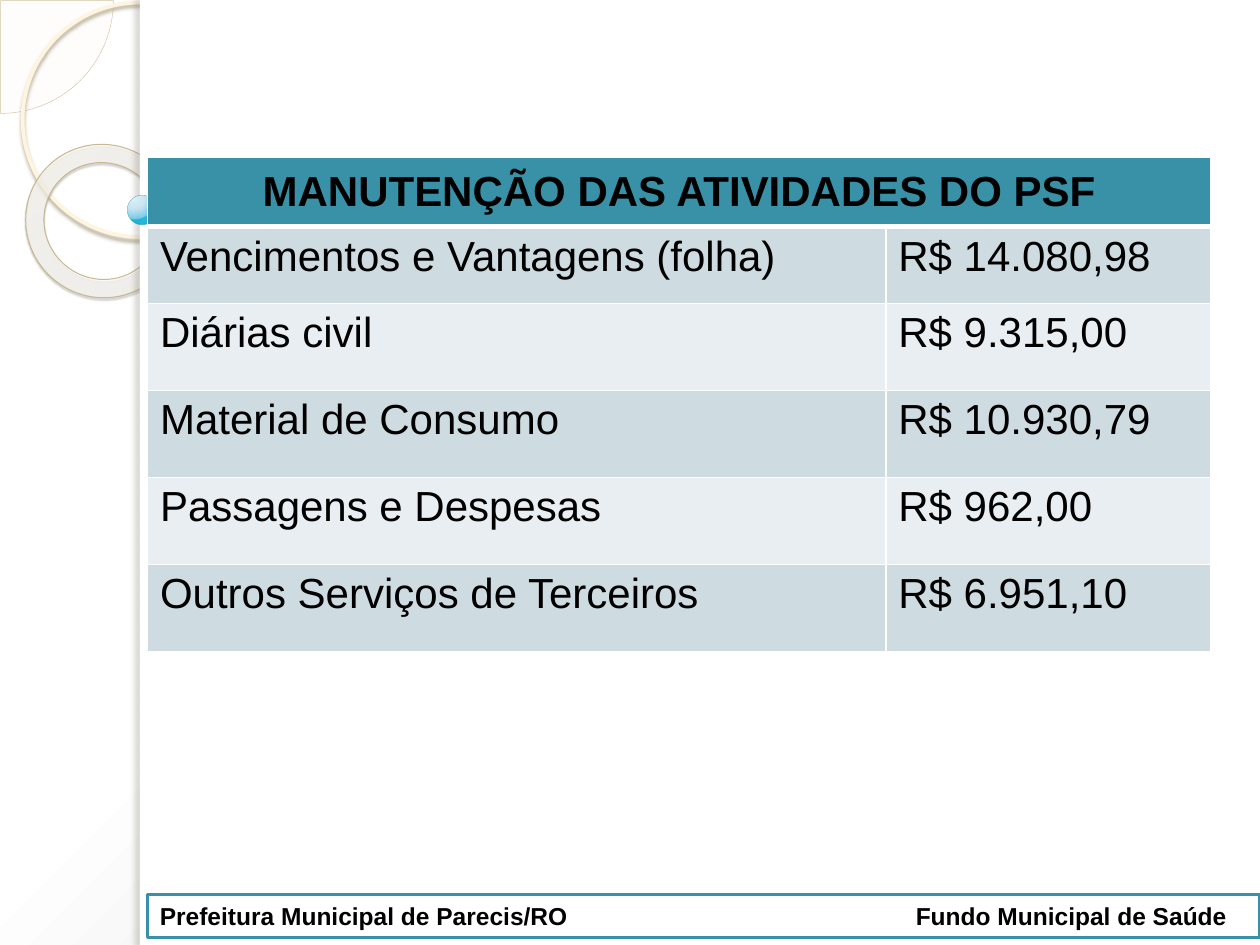
import dataclasses

import pptx
import pptx.dml.color
import pptx.enum.shapes
import pptx.enum.text
import pptx.oxml.ns
import pptx.util
from lxml import etree

Inches = pptx.util.Inches
Pt = pptx.util.Pt
SHAPE = pptx.enum.shapes.MSO_SHAPE
ALIGN = pptx.enum.text.PP_ALIGN
ANCHOR = pptx.enum.text.MSO_ANCHOR
qn = pptx.oxml.ns.qn


@dataclasses.dataclass(frozen=True)
class Theme:
    font: str = "Arial"
    table_size: int = 24
    footer_size: int = 14
    text: str = "000000"
    white: str = "FFFFFF"
    accent: str = "3891A7"
    bands: tuple = ("CEDCE1", "E8EEF1")
    background: tuple = (("FFFFFF", 0, 100), ("FFFFFF", 40, 100), ("C5C5C5", 100, 100))
    donut: tuple = (("FFFCF6", 0, 70), ("FFFEFB", 70, 55), ("F0D28E", 100, 60))
    ball: tuple = (("DAF4FF", 0, 95), ("C3E3F0", 50, 90), ("6BC7E8", 95, 88), ("00ABD5", 100, 85))
    pie: str = "FEFAF4"
    pie_line: str = "D3C39F"
    ring_line: str = "FFF5DE"
    ring_shadow: str = "B0A68F"
    donut_line: str = "C7B893"
    donut_shadow: str = "5A5444"
    ball_line: str = "308EA5"
    dot_line: str = "318093"
    edge_shadow: str = "736F63"


def rgb(color):
    return pptx.dml.color.RGBColor.from_string(color)


def add(parent, tag, **attributes):
    return etree.SubElement(parent, qn(tag), {k: str(v) for k, v in attributes.items()})


def add_color(parent, color, opacity=100):
    node = add(parent, "a:srgbClr", val=color)
    if opacity < 100:
        add(node, "a:alpha", val=opacity * 1000)


def fade(parent, opacity):
    if opacity < 100:
        color = parent.find(qn("a:solidFill") + "/" + qn("a:srgbClr"))
        add(color, "a:alpha", val=opacity * 1000)


def assign(target, values):
    for name, value in values.items():
        setattr(target, name, value)


class SlideBuilder:
    def __init__(self, slide, theme):
        self.slide = slide
        self.theme = theme

    def gradient(self, fill, owner, stops, focus):
        fill.gradient()
        node = owner.find(".//" + qn("a:gradFill"))
        node.clear()
        node.set("rotWithShape", "1")
        stop_list = add(node, "a:gsLst")
        for color, position, opacity in stops:
            add_color(add(stop_list, "a:gs", pos=position * 1000), color, opacity)
        circle = add(node, "a:path", path="circle")
        add(circle, "a:fillToRect", **{s: v * 1000 for s, v in zip("ltrb", focus)})

    def background(self, stops, focus):
        self.gradient(self.slide.background.fill, self.slide.element, stops, focus)

    def shape(self, kind, box, fill=None, opacity=100, focus=None, line=None,
              line_opacity=100, shadow=None, adjust=(), rotation=0):
        shape = self.slide.shapes.add_shape(kind, *map(Inches, box))
        shape.rotation = rotation
        for index, value in enumerate(adjust):
            shape.adjustments[index] = value
        properties = shape.element.spPr
        if focus:
            self.gradient(shape.fill, properties, fill, focus)
        elif fill:
            shape.fill.solid()
            shape.fill.fore_color.rgb = rgb(fill)
            fade(properties, opacity)
        else:
            shape.fill.background()
        if line:
            shape.line.color.rgb = rgb(line[0])
            shape.line.width = Pt(line[1])
            fade(properties.find(qn("a:ln")), line_opacity)
        else:
            shape.line.fill.background()
        shape.shadow.inherit = False
        if shadow:
            color, strength, blur, distance, angle = shadow
            outer = add(properties.find(qn("a:effectLst")), "a:outerShdw",
                        blurRad=Pt(blur), dist=Pt(distance), dir=angle * 60000,
                        algn="ctr", rotWithShape=0)
            add_color(outer, color, strength)
        return shape

    def text(self, frame, words, size, bold=False, align=ALIGN.LEFT):
        paragraph = frame.paragraphs[0]
        paragraph.alignment = align
        run = paragraph.add_run()
        run.text = words
        assign(run.font, {"name": self.theme.font, "size": Pt(size), "bold": bold})
        run.font.color.rgb = rgb(self.theme.text)

    def footer(self, box, left, right, tab):
        theme = self.theme
        bar = self.shape(SHAPE.RECTANGLE, box, theme.white, line=(theme.accent, 2))
        frame = bar.text_frame
        assign(frame, {"word_wrap": True, "vertical_anchor": ANCHOR.MIDDLE,
                       "auto_size": pptx.enum.text.MSO_AUTO_SIZE.SHAPE_TO_FIT_TEXT})
        self.text(frame, f"{left}\t{right}", theme.footer_size, bold=True)
        tabs = add(bar.element.find(".//" + qn("a:pPr")), "a:tabLst")
        add(tabs, "a:tab", pos=Inches(tab), algn="l")

    def cell(self, cell, fill, borders):
        cell.fill.solid()
        cell.fill.fore_color.rgb = rgb(fill)
        properties = cell._tc.get_or_add_tcPr()
        for index, (side, width) in enumerate(zip("LRTB", borders)):
            line = add(properties, f"a:ln{side}", w=Pt(width))
            add_color(add(line, "a:solidFill"), self.theme.white)
            properties.insert(index, line)

    def table(self, box, widths, heights, heading, items):
        theme = self.theme
        table = self.slide.shapes.add_table(
            len(heights), len(widths), *map(Inches, box)).table
        assign(table, {"first_row": False, "horz_banding": False})
        for column, width in zip(table.columns, widths):
            column.width = Inches(width)
        for row, height in zip(table.rows, heights):
            row.height = Inches(height)
        title = table.cell(0, 0)
        title.merge(table.cell(0, len(widths) - 1))
        for cell in table.rows[0].cells:
            self.cell(cell, theme.accent, (1, 1, 1, 3))
        title.vertical_anchor = ANCHOR.MIDDLE
        self.text(title.text_frame, heading, theme.table_size, True, ALIGN.CENTER)
        for number, item in enumerate(items):
            for column, words in enumerate(item):
                cell = table.cell(number + 1, column)
                self.cell(cell, theme.bands[number % 2], (1, 1, 1 if number else 3, 1))
                self.text(cell.text_frame, words, theme.table_size)


def main():
    deck = pptx.Presentation()
    assign(deck, {"slide_width": Inches(10), "slide_height": Inches(7.5)})
    theme = Theme()
    page = SlideBuilder(deck.slides.add_slide(deck.slide_layouts[6]), theme)

    page.background(theme.background, (-24, -20, 124, 120))
    page.shape(SHAPE.PIE, (-0.89, -0.89, 1.79, 1.79), theme.pie, opacity=33,
               line=(theme.pie_line, 0.25), adjust=(0, 54))
    page.shape(SHAPE.OVAL, (0.18, 0.02, 1.86, 1.86), line=(theme.ring_line, 2.15),
               shadow=(theme.ring_shadow, 85, 2, 2, 90))
    page.shape(SHAPE.DONUT, (0.2, 1.15, 1.23, 1.21), theme.donut,
               focus=(-408, -50, 508, 150), line=(theme.donut_line, 0.58),
               shadow=(theme.donut_shadow, 35, 1, 1.2, 75), adjust=(0.12,), rotation=38.6)
    page.shape(SHAPE.RECTANGLE, (1.11, 0, 8.89, 7.5), theme.white)
    page.shape(SHAPE.RECTANGLE, (1.11, 0, 0.08, 7.5), theme.white,
               shadow=(theme.edge_shadow, 25, 3, 3, 180))
    page.shape(SHAPE.OVAL, (1.01, 1.55, 0.23, 0.23), theme.ball, focus=(25, 12, 75, 88),
               line=(theme.ball_line, 0.16), line_opacity=60)
    page.shape(SHAPE.OVAL, (1.27, 1.47, 0.07, 0.07), line=(theme.dot_line, 1),
               line_opacity=60)

    page.footer((1.17, 7.1, 8.83, 0.34), "Prefeitura Municipal de Parecis/RO",
                "Fundo Municipal de Saúde", tab=6)
    expenses = [
        ("Vencimentos e Vantagens (folha)", "R$ 14.080,98"),
        ("Diárias civil", "R$ 9.315,00"),
        ("Material de Consumo", "R$ 10.930,79"),
        ("Passagens e Despesas", "R$ 962,00"),
        ("Outros Serviços de Terceiros", "R$ 6.951,10"),
    ]
    page.table((1.17, 1.25, 8.44, 3.9), (5.86, 2.58), [0.55, 0.61] + [0.69] * 4,
               "MANUTENÇÃO DAS ATIVIDADES DO PSF", expenses)
    deck.save("out.pptx")


if __name__ == "__main__":
    main()
